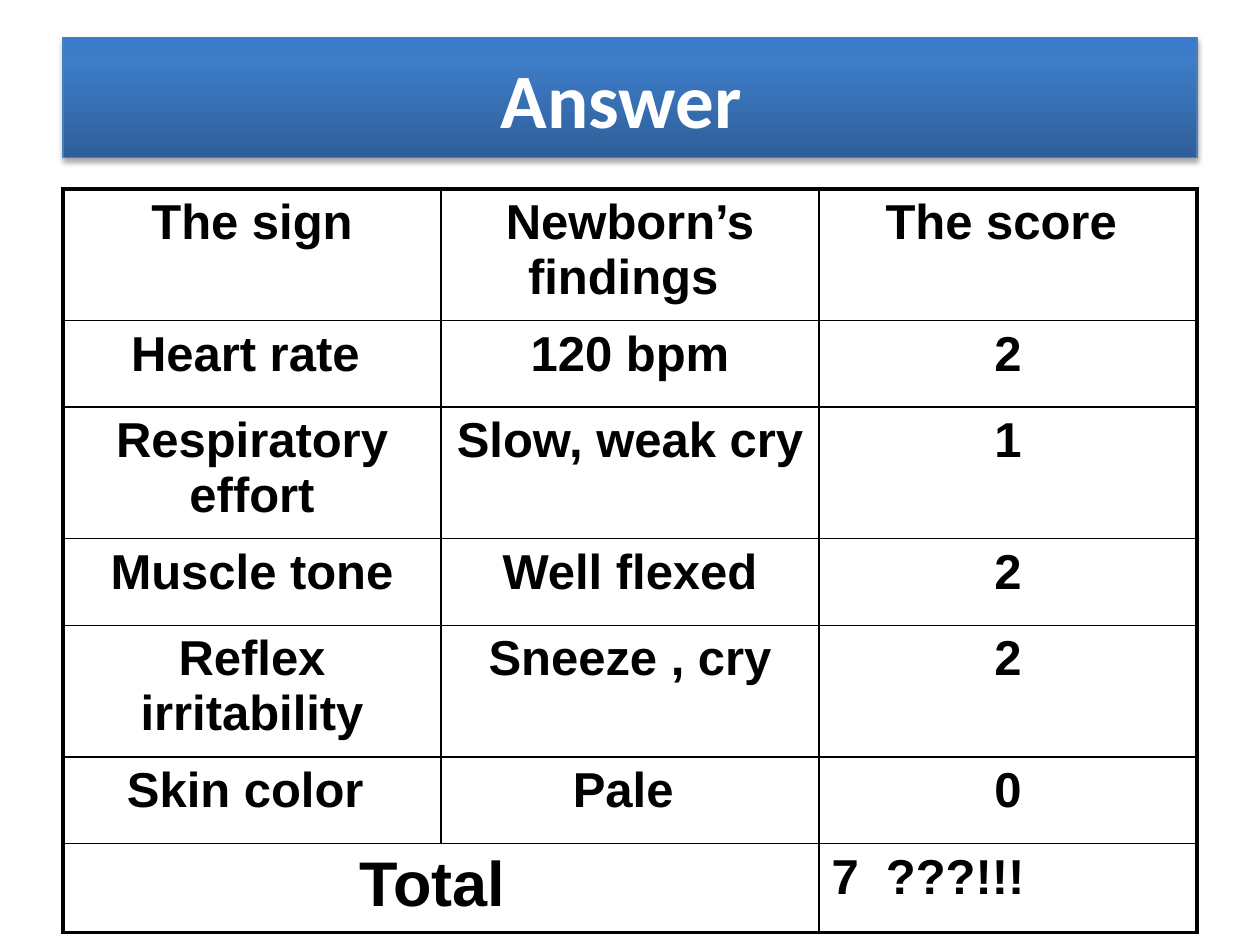
import pptx
import pptx.dml.color
import pptx.enum.shapes
import pptx.enum.text
import pptx.oxml
import pptx.oxml.ns
import pptx.util
from pptx.util import Pt

# Content
TITLE = "Answer "
ROWS = [
    ("The sign", "Newborn’s findings ", "The score "),
    ("Heart rate ", "120 bpm", "2"),
    ("Respiratory effort", "Slow, weak cry", "1"),
    ("Muscle tone", "Well flexed", "2"),
    ("Reflex irritability", "Sneeze , cry", "2"),
    ("Skin color ", "Pale ", "0"),
    ("Total ", "", "7  ???!!!"),
]
TALL, SHORT, LAST = 75.2, 49.5, 51
ROW_HEIGHTS = [TALL, SHORT, TALL, SHORT, TALL, SHORT, LAST]
COLUMN_WIDTH = 216

THEME = {
    "title_font": "Calibri", "title_size": 44, "title_color": "FFFFFF",
    "gradient": [(0, "2F5F99"), (80, "3D7CC7"), (100, "3A7CCB")],
    "title_line": "4B7EBC",
    "table_font": "Arial", "table_size": 28, "total_size": 36,
    "ink": "000000", "outer": 2.25, "inner": 1,
}
LEFT, WIDTH = 36, 648
ALIGN = pptx.enum.text.PP_ALIGN
NAMESPACE = pptx.oxml.ns.nsdecls("a")


def style(span, font, size, color):
    span.font.name = font
    span.font.size = Pt(size)
    span.font.bold = True
    span.font.color.rgb = pptx.dml.color.RGBColor.from_string(color)


def add_title(slide):
    box = slide.shapes.add_shape(
        pptx.enum.shapes.MSO_SHAPE.RECTANGLE, Pt(LEFT), Pt(21.6), Pt(WIDTH), Pt(68.4))
    box.line.color.rgb = pptx.dml.color.RGBColor.from_string(THEME["title_line"])
    box.line.width = Pt(0.75)

    # Three-stop gradient, dark at the bottom
    stops = "".join(
        f'<a:gs pos="{place * 1000}"><a:srgbClr val="{color}"/></a:gs>'
        for place, color in THEME["gradient"])
    gradient = pptx.oxml.parse_xml(
        f'<a:gradFill {NAMESPACE}><a:gsLst>{stops}</a:gsLst>'
        '<a:lin ang="16200000" scaled="0"/></a:gradFill>')
    properties = box._element.spPr
    properties.find(pptx.oxml.ns.qn("a:prstGeom")).addnext(gradient)

    # Soft shadow below
    properties.append(pptx.oxml.parse_xml(
        f'<a:effectLst {NAMESPACE}><a:outerShdw blurRad="{Pt(3.1)}" dist="{Pt(1.8)}" '
        'dir="5400000" rotWithShape="0"><a:srgbClr val="000000"><a:alpha val="35000"/>'
        '</a:srgbClr></a:outerShdw></a:effectLst>'))

    frame = box.text_frame
    frame.text = TITLE
    frame.word_wrap = True
    frame.vertical_anchor = pptx.enum.text.MSO_ANCHOR.MIDDLE
    para = frame.paragraphs[0]
    para.alignment = ALIGN.CENTER
    style(para.runs[0], THEME["title_font"], THEME["title_size"], THEME["title_color"])


def set_borders(cell, outer_sides):
    """Thick lines on the table's edge, thin lines inside."""
    properties = cell._tc.get_or_add_tcPr()
    for place, side in enumerate("LRTB"):
        width = THEME["outer"] if side in outer_sides else THEME["inner"]
        properties.insert(place, pptx.oxml.parse_xml(
            f'<a:ln{side} {NAMESPACE} w="{Pt(width)}"><a:solidFill>'
            f'<a:srgbClr val="{THEME["ink"]}"/></a:solidFill></a:ln{side}>'))


def add_score_table(slide):
    last_row, last_column = len(ROWS) - 1, len(ROWS[0]) - 1
    table = slide.shapes.add_table(
        len(ROWS), len(ROWS[0]), Pt(LEFT), Pt(108), Pt(WIDTH), Pt(sum(ROW_HEIGHTS))).table
    table.first_row = table.horz_banding = False
    for column in table.columns:
        column.width = Pt(COLUMN_WIDTH)
    for row, height in zip(table.rows, ROW_HEIGHTS):
        row.height = Pt(height)
    table.cell(last_row, 0).merge(table.cell(last_row, 1))

    for r, texts in enumerate(ROWS):
        for c, text in enumerate(texts):
            cell = table.cell(r, c)
            cell.fill.background()
            edges = {"L": c == 0, "R": c == last_column, "T": r == 0, "B": r == last_row}
            set_borders(cell, [side for side, on_edge in edges.items() if on_edge])
            if not text:
                continue
            cell.text_frame.text = text
            para = cell.text_frame.paragraphs[0]
            is_total = (r, c) == (last_row, last_column)
            para.alignment = ALIGN.LEFT if is_total else ALIGN.CENTER
            size = THEME["total_size" if cell.is_merge_origin else "table_size"]
            style(para.runs[0], THEME["table_font"], size, THEME["ink"])


def main():
    deck = pptx.Presentation()
    deck.slide_width, deck.slide_height = Pt(720), Pt(540)
    slide = deck.slides.add_slide(deck.slide_layouts[6])
    add_title(slide)
    add_score_table(slide)
    deck.save("out.pptx")


if __name__ == "__main__":
    main()
